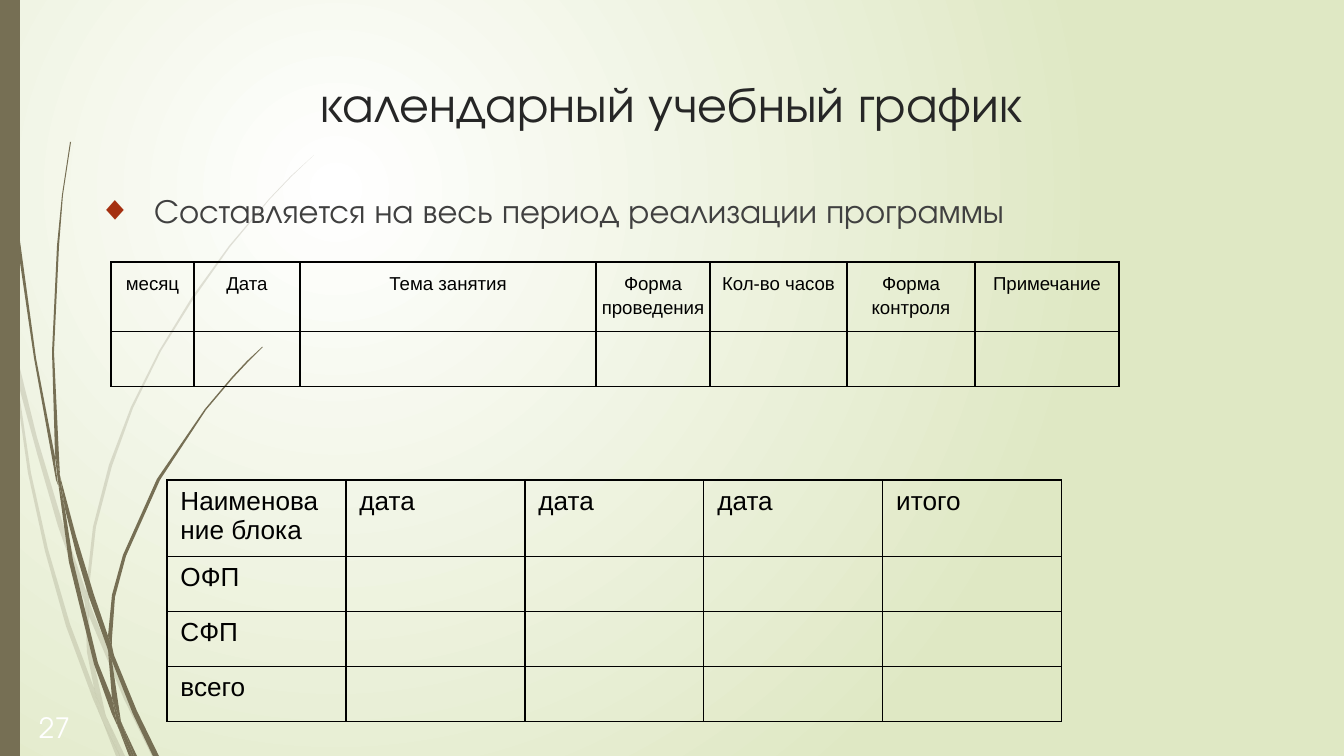
from lxml.etree import SubElement
from pptx import Presentation
from pptx.dml.color import RGBColor
from pptx.enum.shapes import MSO_SHAPE
from pptx.enum.text import PP_ALIGN
from pptx.oxml import parse_xml
from pptx.oxml.ns import nsdecls, qn
from pptx.util import Pt

SCALE = 9144000 / 1344  # EMU in one px
WIDTH, HEIGHT = 1344, 756
DISPLAY, PLAIN = "TeX Gyre Adventor", "Arial"
COLORS = {
    "center": "FFFFFF", "edge": "DFE8C4", "grass": "766F54", "title": "262626",
    "body": "404040", "bullet": "A53010", "ink": "000000", "number": "FFFFFF",
}

FAINT_GRASS = [
    [(11, 353), (8, 324), (0, 284), (0, 301), (11, 347)],
    [(58, 526), (85, 603), (86, 591), (63, 524), (37, 437), (15, 348), (17, 379), (37, 453)],
    [(93, 612), (89, 601), (89, 616), (124, 699), (152, 756), (156, 756), (128, 698)],
    [(120, 756), (125, 756), (106, 716)],
    [(94, 688), (70, 624), (48, 549), (31, 473), (17, 379), (11, 353), (28, 473),
     (45, 551), (66, 626), (93, 699), (102, 720), (99, 712)],
    [(85, 603), (87, 652), (94, 688), (97, 698), (106, 716), (105, 712), (91, 650),
     (89, 616), (89, 613)],
    [(89, 589), (96, 527), (112, 466), (133, 408), (161, 351), (194, 298), (230, 247),
     (270, 199), (292, 176), (314, 155), (291, 176), (269, 199), (229, 246), (192, 297),
     (159, 351), (131, 407), (109, 465), (93, 527), (86, 589), (86, 591), (89, 601)],
    [(102, 720), (116, 756), (120, 756)],
    [(89, 613), (89, 616), (89, 601), (86, 591), (85, 603)],
    [(97, 698), (94, 688), (99, 712), (102, 720), (120, 756), (106, 716)],
]
DARK_GRASS = [
    [(7, 110), (16, 235), (34, 358), (56, 480), (58, 485), (55, 461), (55, 457),
     (36, 358), (19, 234), (8, 110), (4, 48), (4, 0), (3, 0), (3, 48)],
    [(89, 597), (108, 650), (108, 636), (94, 595), (76, 536), (60, 476), (65, 509), (76, 553)],
    [(114, 655), (112, 646), (112, 661), (133, 714), (153, 756), (159, 756), (137, 711)],
    [(112, 698), (98, 663), (73, 560), (65, 509), (58, 481), (69, 562), (94, 664),
     (112, 714), (118, 727), (117, 723)],
    [(60, 476), (59, 457), (54, 352), (59, 246), (63, 195), (71, 142), (70, 142),
     (62, 195), (57, 246), (52, 352), (55, 453)],
    [(134, 756), (137, 756), (122, 724)],
    [(58, 481), (65, 509), (60, 476), (55, 453), (55, 457)],
    [(112, 638), (115, 597), (126, 556), (160, 480), (206, 410), (233, 378), (248, 362),
     (263, 347), (262, 347), (247, 361), (232, 377), (205, 409), (157, 479), (123, 555),
     (112, 595), (108, 636), (112, 646)],
    [(118, 727), (129, 756), (132, 756)],
    [(108, 650), (112, 698), (117, 712), (122, 724), (121, 722), (112, 661), (109, 656)],
    [(108, 650), (109, 656), (112, 661), (112, 646), (108, 636)],
    [(117, 712), (112, 698), (117, 723), (118, 727), (132, 756), (134, 756), (122, 724)],
]

SCHEDULE = [
    ["месяц", "Дата", "Тема занятия", "Форма проведения", "Кол-во часов",
     "Форма контроля", "Примечание"],
    [""] * 7,
]
BLOCKS = [["Наименование блока", "дата", "дата", "дата", "итого"]] + [
    [name, "", "", "", ""] for name in ("ОФП", "СФП", "всего")
]


def px(*lengths):
    return [round(length * SCALE) for length in lengths]


def color(name):
    return RGBColor.from_string(COLORS[name])


def paint_background(page):
    """Fill the page with a radial gradient centred in its upper left quarter."""
    fill = page.background.fill
    fill.gradient()
    for stop, name in zip(fill.gradient_stops, ("center", "edge")):
        stop.color.rgb = color(name)
    fill.gradient_stops[0].position, fill.gradient_stops[1].position = 0, 1
    gradient = page.background._cSld.find(".//" + qn("a:gradFill"))
    gradient.replace(gradient.find(qn("a:lin")), parse_xml(
        f'<a:path {nsdecls("a")} path="circle">'
        '<a:fillToRect l="50000" t="50000" r="100000" b="100000"/></a:path>'))


def paint_grass(shape, opacity=100):
    shape.shadow.inherit = False
    shape.fill.solid()
    shape.fill.fore_color.rgb = color("grass")
    shape.line.fill.background()
    if opacity < 100:
        tint = shape._element.spPr.find(".//" + qn("a:srgbClr"))
        SubElement(tint, qn("a:alpha"), val=str(opacity * 1000))


def add_grass(page, blades, opacity=100):
    group = page.shapes.add_group_shape()
    for start, *others in blades:
        builder = group.shapes.build_freeform(*start, scale=SCALE)
        builder.add_line_segments(others, close=True)
        paint_grass(builder.convert_to_shape(), opacity)


def set_font(paragraph, face, size, color_name):
    paragraph.font.name = face
    paragraph.font.size = Pt(size)
    paragraph.font.color.rgb = color(color_name)


def add_text(page, bounds, text, size, color_name, align=PP_ALIGN.LEFT):
    box = page.shapes.add_textbox(*px(*bounds))
    frame = box.text_frame
    frame.word_wrap = True
    (frame.margin_left, frame.margin_top,
     frame.margin_right, frame.margin_bottom) = px(13, 13, 13, 13)
    para = frame.paragraphs[0]
    para.text = text
    para.alignment = align
    set_font(para, DISPLAY, size, color_name)
    return para


def add_bullet(para, indent, hanging):
    para.space_before = Pt(6)
    properties = para._p.get_or_add_pPr()
    left, first = px(indent, -hanging)
    properties.set("marL", str(left))
    properties.set("indent", str(first))
    marks = (f'<a:buClr {nsdecls("a")}><a:srgbClr val="{COLORS["bullet"]}"/></a:buClr>',
             f'<a:buFont {nsdecls("a")} typeface="{PLAIN}"/>',
             f'<a:buChar {nsdecls("a")} char="◆"/>')
    for mark in marks:
        properties.find(qn("a:defRPr")).addprevious(parse_xml(mark))


def add_borders(cell):
    properties = cell._tc.get_or_add_tcPr()
    for position, side in enumerate(("lnL", "lnR", "lnT", "lnB")):
        properties.insert(position, parse_xml(
            f'<a:{side} {nsdecls("a")} w="{Pt(0.75)}"><a:solidFill>'
            f'<a:srgbClr val="{COLORS["ink"]}"/></a:solidFill></a:{side}>'))


def add_grid(page, left, top, widths, row_height, rows, size, compact=False):
    """Add a ruled table; a compact one has centred text and narrow side margins."""
    frame = page.shapes.add_table(
        len(rows), len(widths), *px(left, top, sum(widths), row_height * len(rows)))
    table = frame.table
    table.first_row = table.horz_banding = False
    for column, width in zip(table.columns, widths):
        column.width, = px(width)
    for row, texts in zip(table.rows, rows):
        row.height, = px(row_height)
        for cell, text in zip(row.cells, texts):
            cell.fill.background()
            add_borders(cell)
            cell.text = text
            para = cell.text_frame.paragraphs[0]
            set_font(para, PLAIN, size, "ink")
            if compact:
                cell.margin_left, cell.margin_right = px(5, 5)
                cell.margin_top, cell.margin_bottom = px(9, 9)
                para.alignment = PP_ALIGN.CENTER
                para.line_spacing = 1.15


def main():
    deck = Presentation()
    deck.slide_width, deck.slide_height = px(WIDTH, HEIGHT)
    page = deck.slides.add_slide(deck.slide_layouts[6])
    paint_background(page)
    add_grass(page, FAINT_GRASS, opacity=20)
    add_grass(page, DARK_GRASS)
    paint_grass(page.shapes.add_shape(MSO_SHAPE.RECTANGLE, *px(0, 0, 20, HEIGHT)))
    add_text(page, (130, 59, 1083, 126), "календарный учебный график", 27, "title",
             PP_ALIGN.CENTER)
    body = add_text(page, (74, 177, 1176, 547),
                    "Составляется на весь период реализации программы", 18, "body")
    add_bullet(body, indent=67, hanging=56)
    add_grid(page, 111, 262, (83, 106, 296, 114, 137, 128, 144), 55, SCHEDULE, 10, compact=True)
    add_grid(page, 167, 480, [179] * 5, 55, BLOCKS, 14)
    add_text(page, (26, 698, 70, 56), "27", 15, "number")
    deck.save("out.pptx")


if __name__ == "__main__":
    main()
